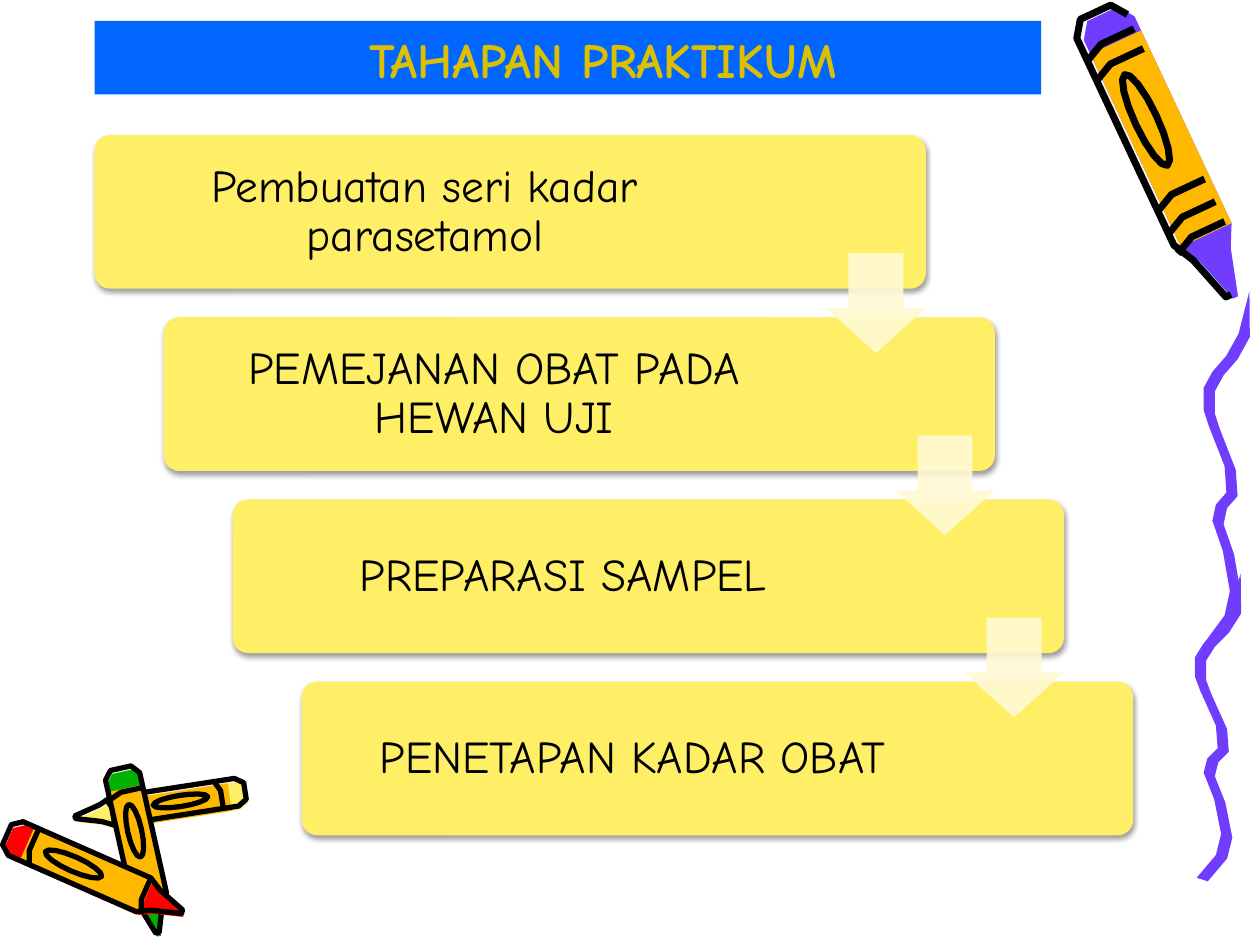
from dataclasses import dataclass
from math import cos, hypot, pi, sin

from lxml.etree import SubElement
from pptx import Presentation
from pptx.dml.color import RGBColor
from pptx.enum.shapes import MSO_SHAPE
from pptx.enum.text import MSO_ANCHOR, PP_ALIGN
from pptx.oxml.ns import qn
from pptx.util import Pt

FONT = "Comic Neue"
COLORS = {
    "ink": "000000", "paper": "F8F8F8", "wrapper": "FFB800",
    "purple": "703DFF", "cream": "FFEF66", "red": "FF0000", "green": "00B200",
    "banner": "0066FF", "title": "DCC000", "card": "FFEF66", "arrow": "FFF9D3",
}
STEPS = [
    "Pembuatan seri kadar parasetamol",
    "PEMEJANAN OBAT PADA HEWAN UJI",
    "PREPARASI SAMPEL",
    "PENETAPAN KADAR OBAT",
]
CARD_LEFT, CARD_TOP, CARD_WIDTH, CARD_HEIGHT = 54, 77.2, 475, 87.8
STEP_RIGHT, STEP_DOWN = 39.5, 104.1
ARROW_SIZE = 57

# Crayon parts are (along, across): along runs from 0 at the blunt end
# to 1 at the tip, across from -1 to 1 between the two long sides.
WRAPPER_START, SHOULDER = 0.1, 0.78
CONTOUR = [
    (0.05, 1), (0, 0.6), (0, -0.6), (0.05, -1), (SHOULDER, -1), (0.85, -0.6),
    (1, -0.1), (1, 0.1), (0.85, 0.6), (SHOULDER, 1),
]
LEFT_CONTOUR = CONTOUR[:8]
WRAPPER = [(WRAPPER_START, -1), (SHOULDER, -1), (SHOULDER, 1), (WRAPPER_START, 1)]
LABEL_CENTER, LABEL_LENGTH, LABEL_WIDTH, LABEL_CORNERS = 0.38, 0.16, 0.4, 16

# Middle of the squiggle from top to bottom, in points.
WAVE = [
    (26, 0), (23, 22), (16, 33), (8, 41), (3, 49), (3, 60), (6, 68), (15, 88),
    (16, 101), (10, 107), (8, 115), (14, 130), (18, 150), (15, 162), (4, 175),
]


@dataclass
class Crayon:
    wax: str
    end: tuple
    tip: tuple
    width: float
    stroke: float = 3
    bands: tuple = (0.14, SHOULDER)
    color_shift: tuple = (1, 2)
    contour: tuple = tuple(CONTOUR)
    closed: bool = True

    def place(self, part, shift=(0, 0)):
        """Turn (along, across) corners into points on the page."""
        run, drop = self.tip[0] - self.end[0], self.tip[1] - self.end[1]
        half = self.width / 2 / hypot(run, drop)
        return [(self.end[0] + along * run + across * half * drop + shift[0],
                 self.end[1] + along * drop - across * half * run + shift[1])
                for along, across in part]


CRAYONS = [
    Crayon("purple", (626, 7), (702, 169), 32, stroke=4, bands=(0.1, 0.17, 0.63, 0.71, SHOULDER),
           color_shift=(4, 1), contour=tuple(LEFT_CONTOUR), closed=False),
    Crayon("cream", (140, 452), (43, 467), 16),
    Crayon("green", (69, 439), (90, 533), 20),
    Crayon("red", (4, 477), (104, 521), 21),
]


def rgb(color):
    return RGBColor.from_string(COLORS[color])


def paint(shape, color):
    shape.shadow.inherit = False
    shape.fill.solid()
    shape.fill.fore_color.rgb = rgb(color)
    shape.line.fill.background()


def draw_outline(page, points, closed=True):
    start, *rest = [(Pt(x), Pt(y)) for x, y in points]
    builder = page.shapes.build_freeform(*start)
    builder.add_line_segments(rest, close=closed)
    return builder.convert_to_shape()


def draw_area(page, points, color):
    paint(draw_outline(page, points), color)


def draw_stroke(page, points, width, closed=False):
    stroke = draw_outline(page, points, closed)
    stroke.shadow.inherit = False
    stroke.fill.background()
    stroke.line.color.rgb = rgb("ink")
    stroke.line.width = Pt(width)


def add_crayon(page, crayon):
    draw_area(page, crayon.place(CONTOUR), "paper")
    for part, color in ((CONTOUR, crayon.wax), (WRAPPER, "wrapper")):
        draw_area(page, crayon.place(part, crayon.color_shift), color)
    draw_stroke(page, crayon.place(crayon.contour), crayon.stroke, crayon.closed)
    for along in crayon.bands:
        band = [(along + 0.03, -1), (along, -0.3), (along, 1)]
        draw_stroke(page, crayon.place(band), crayon.stroke)
    turns = [2 * pi * i / LABEL_CORNERS for i in range(LABEL_CORNERS)]
    label = [(LABEL_CENTER + LABEL_LENGTH * cos(turn), LABEL_WIDTH * sin(turn)) for turn in turns]
    draw_stroke(page, crayon.place(label), crayon.stroke, closed=True)


def add_squiggle(page, left, top, stretch):
    """Thicken the wave into a ribbon that narrows to a point at its top."""
    middle = [(left + x, top + y * stretch) for x, y in WAVE]
    right_side = [(x + 3.2, y + 1) for x, y in middle[1:]]
    left_side = [(x - 3.2, y - 1) for x, y in middle[1:]]
    draw_area(page, [middle[0], *right_side, *reversed(left_side)], "purple")


def add_block(page, kind, color, left, top, width, height, adjustments=()):
    block = page.shapes.add_shape(kind, Pt(left), Pt(top), Pt(width), Pt(height))
    paint(block, color)
    for index, value in enumerate(adjustments):
        block.adjustments[index] = value
    return block


def write(shape, text, size, color, anchor, bold=False):
    frame = shape.text_frame
    frame.word_wrap = True
    frame.vertical_anchor = anchor
    para = frame.paragraphs[0]
    para.alignment = PP_ALIGN.CENTER
    span = para.add_run()
    span.text = text
    span.font.name = FONT
    span.font.size = Pt(size)
    span.font.bold = bold
    span.font.color.rgb = rgb(color)
    return frame


def add_title(page):
    banner = add_block(page, MSO_SHAPE.RECTANGLE, "banner", 54, 12, 541, 42)
    frame = write(banner, "TAHAPAN PRAKTIKUM", 28, "title", MSO_ANCHOR.BOTTOM, bold=True)
    frame.margin_left = Pt(47)


def drop_shadow(shape):
    effects = shape._element.spPr.find(qn("a:effectLst"))
    shadow = SubElement(effects, qn("a:outerShdw"), blurRad=str(Pt(3.1)), dist=str(Pt(1.6)),
                        dir="5400000", rotWithShape="0")
    tint = SubElement(shadow, qn("a:srgbClr"), val=COLORS["ink"])
    SubElement(tint, qn("a:alpha"), val="38000")


def add_card(page, left, top, text):
    card = add_block(page, MSO_SHAPE.ROUNDED_RECTANGLE, "card",
                     left, top, CARD_WIDTH, CARD_HEIGHT, [0.1])
    drop_shadow(card)
    box = page.shapes.add_textbox(Pt(left + 2.5), Pt(top + 2.5), Pt(373), Pt(CARD_HEIGHT - 5))
    frame = write(box, text, 26, "ink", MSO_ANCHOR.MIDDLE)
    frame.margin_left = frame.margin_right = frame.margin_top = frame.margin_bottom = Pt(7.8)
    frame.paragraphs[0].line_spacing = 0.9


def add_arrow(page, card_left, card_top):
    """Point from the card at this place to the next one."""
    arrow = add_block(page, MSO_SHAPE.DOWN_ARROW, "arrow", card_left + CARD_WIDTH - ARROW_SIZE,
                      card_top + 67.5, ARROW_SIZE, ARROW_SIZE, [0.55, 0.45])
    tint = arrow._element.spPr.find(qn("a:solidFill"))[0]
    SubElement(tint, qn("a:alpha"), val="90000")


def main():
    deck = Presentation()
    deck.slide_width, deck.slide_height = Pt(720), Pt(540)
    page = deck.slides.add_slide(deck.slide_layouts[6])
    for crayon in CRAYONS:
        add_crayon(page, crayon)
    add_squiggle(page, left=683, top=327.6, stretch=1)
    add_squiggle(page, left=688, top=166.3, stretch=1.15)
    add_title(page)
    places = [(CARD_LEFT + i * STEP_RIGHT, CARD_TOP + i * STEP_DOWN) for i in range(len(STEPS))]
    for (left, top), text in zip(places, STEPS):
        add_card(page, left, top, text)
    for left, top in places[:-1]:
        add_arrow(page, left, top)
    deck.save("out.pptx")


if __name__ == "__main__":
    main()
